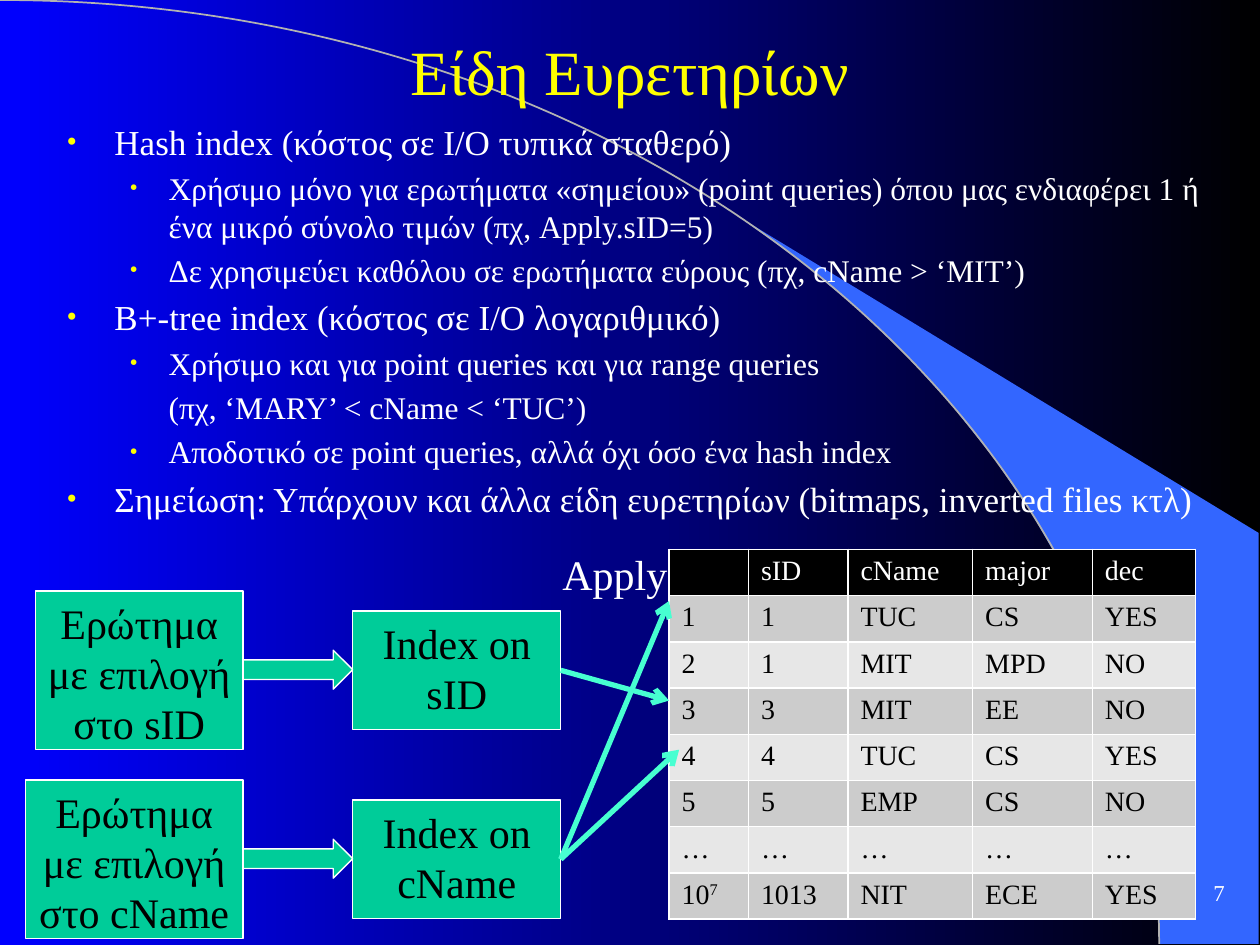
import math
from lxml import etree
from pptx import Presentation
from pptx import util as u
from pptx.dml.color import RGBColor
from pptx.enum import shapes, text
from pptx.oxml import ns

# Content
TITLE = "Είδη Ευρετηρίων"
BODY = [  # level, bullet, text
    (0, True, "Hash index (κόστος σε I/O τυπικά σταθερό)"),
    (1, True, "Χρήσιμο μόνο για ερωτήματα «σημείου» (point queries) όπου μας "
              "ενδιαφέρει 1 ή ένα μικρό σύνολο τιμών (πχ, Apply.sID=5)"),
    (1, True, "Δε χρησιμεύει καθόλου σε ερωτήματα εύρους (πχ, cName > ‘MIT’)"),
    (0, True, "B+-tree index (κόστος σε I/O λογαριθμικό)"),
    (1, True, "Χρήσιμο και για point queries και για range queries"),
    (1, False, "(πχ, ‘MARY’ < cName < ‘TUC’)"),
    (1, True, "Αποδοτικό σε point queries, αλλά όχι όσο ένα hash index"),
    (0, True, "Σημείωση: Υπάρχουν και άλλα είδη ευρετηρίων "
              "(bitmaps, inverted files κτλ)"),
]
LEVELS = [dict(size=20, left=0.38, hang=0.38, mark=85),
          dict(size=18, left=0.81, hang=0.31, mark=75)]
ROWS = [
    ["", "sID", "cName", "major", "dec"],
    ["1", "1", "TUC", "CS", "YES"],
    ["2", "1", "MIT", "MPD", "NO"],
    ["3", "3", "MIT", "EE", "NO"],
    ["4", "4", "TUC", "CS", "YES"],
    ["5", "5", "EMP", "CS", "NO"],
    ["…"] * 5,
    ["10^7", "1013", "NIT", "ECE", "YES"],
]
COLS = [0.63, 0.79, 0.99, 0.95, 0.82]
FLOWS = [  # column name, middle, left of the query box, arrow targets
    ("sID", 5.32, 0.28, [(5.31, 5.56)]),
    ("cName", 6.82, 0.2, [(5.31, 4.77), (5.39, 5.95)]),
]
HEX = dict(blue="0000FF", black="000000", white="FFFFFF", yellow="FFFF00",
           wedge="3366FF", arc="B2B2B2", box="00CC99", link="47FFD1",
           odd="CCCCCC", even="E7E7E7")
FONT = "Times New Roman"
WIDE, HIGH = 10, 7.5
RX, RY = 0.92 * WIDE, 7.49  # radii of the background arc

deck = Presentation()
deck.slide_width, deck.slide_height = u.Inches(WIDE), u.Inches(HIGH)
slide = deck.slides.add_slide(deck.slide_layouts[6])
items = slide.shapes


def rgb(name):
    return RGBColor.from_string(HEX[name])


def inches(*nums):
    return [u.Inches(n) for n in nums]


def add(node, tag, **attrs):
    kid = etree.SubElement(node, ns.qn(tag))
    for key, val in attrs.items():
        kid.set(key, str(val))
    return kid


def write(par, words, size=24, color="white", align="CENTER"):
    """Fill a paragraph; a caret starts a superscript."""
    par.alignment = getattr(text.PP_ALIGN, align)
    if not words:
        add(par._p, "a:endParaRPr", sz=size * 100)
        return
    for n, part in enumerate(words.split("^")):
        run = par.add_run()
        run.text = part
        run.font.size, run.font.name = u.Pt(size), FONT
        run.font.color.rgb = rgb(color)
        if n:
            run.font._element.set("baseline", "30000")


def setup(shape, pad=0.09, anchor="TOP"):
    frame = shape.text_frame
    frame.word_wrap = True
    frame.vertical_anchor = getattr(text.MSO_ANCHOR, anchor)
    frame.margin_left = frame.margin_right = u.Inches(pad)
    frame.margin_top = frame.margin_bottom = u.Inches(0.05)
    return frame


def label(words, at, anchor="TOP", **style):
    frame = setup(items.add_textbox(*inches(*at)), anchor=anchor)
    write(frame.paragraphs[0], words, **style)


def paint(shape, fill=None, line=None, width=0.75):
    shape.shadow.inherit = False
    if fill:
        shape.fill.solid()
        shape.fill.fore_color.rgb = rgb(fill)
    else:
        shape.fill.background()
    if line:
        shape.line.color.rgb = rgb(line)
        shape.line.width = u.Pt(width)
    else:
        shape.line.fill.background()


def block(kind, at, lines=()):
    shape = items.add_shape(getattr(shapes.MSO_SHAPE, kind), *inches(*at))
    paint(shape, "box", "white")
    frame = setup(shape)
    for n, words in enumerate(lines):
        par = frame.add_paragraph() if n else frame.paragraphs[0]
        write(par, words, color="black")
    return shape


def outline(points, close):
    spots = [tuple(inches(*p)) for p in points]
    form = items.build_freeform(*spots[0])
    form.add_line_segments(spots[1:], close=close)
    return form.convert_to_shape()


# Background: gradient, wedge and arc
back = slide.background.fill
back.gradient()
back.gradient_angle = 0
for stop, name in zip(back.gradient_stops, ("blue", "black")):
    stop.color.rgb = rgb(name)
first, steps = math.acos(5.89 / RX), 13
turns = [first * (1 - n / steps) for n in range(steps + 1)]
edge = [(RX * math.cos(t), RY * (1 - math.sin(t))) for t in turns]
paint(outline(edge + [(9.99, RY), (9.99, 4.23)], True), "wedge")

arc = outline([(0, 0), (RX, RY)], False)
seg = arc._element.find(".//" + ns.qn("a:lnTo"))
seg.tag = ns.qn("a:cubicBezTo")
for spot in ((RX, 3.35), (5.08, 0)):
    x, y = inches(*spot)
    seg.insert(0, add(seg, "a:pt", x=x, y=y))
paint(arc, line="arc", width=1)

# Page number and title
label("7", (9.25, 6.83, 0.56, 0.5), "MIDDLE", size=13, align="RIGHT")
label(TITLE, (0.75, 0.12, 8.5, 0.87), "MIDDLE", size=36, color="yellow")

# Bulleted text
frame = setup(items.add_textbox(*inches(0.43, 0.91, 9.21, 4.5)), pad=0.1)
for n, (level, bullet, words) in enumerate(BODY):
    par = frame.add_paragraph() if n else frame.paragraphs[0]
    look = LEVELS[level]
    write(par, words, size=look["size"], align="LEFT")
    par.level = level
    props = par._p.get_or_add_pPr()
    props.set("marL", str(u.Inches(look["left"])))
    props.set("indent", str(-u.Inches(look["hang"]) if bullet else 0))
    add(add(props, "a:spcBef"), "a:spcPct", val=20000)
    if bullet:
        add(add(props, "a:buClr"), "a:srgbClr", val=HEX["yellow"])
        add(props, "a:buSzPct", val=look["mark"] * 1000)
        add(props, "a:buFont", typeface=FONT)
        add(props, "a:buChar", char="•")
    else:
        add(props, "a:buNone")

# Table
label("Apply", (4.13, 4.3, 1.5, 0.51))
table = items.add_table(len(ROWS), len(COLS),
                        *inches(5.31, 4.36, sum(COLS), 2.93)).table
for col, width in zip(table.columns, COLS):
    col.width = u.Inches(width)
for r, row in enumerate(ROWS):
    for c, words in enumerate(row):
        cell = table.cell(r, c)
        write(cell.text_frame.paragraphs[0], words, size=16, align="LEFT",
              color="black" if r else "white")
        props = cell._tc.get_or_add_tcPr()
        for side in "LRTB":
            line = add(props, "a:ln" + side, w=u.Pt(1))
            add(add(line, "a:solidFill"), "a:srgbClr", val=HEX["white"])
        cell.fill.solid()
        shade = ("odd" if r % 2 else "even") if r else "black"
        cell.fill.fore_color.rgb = rgb(shade)

# Query, index and links into the table
for name, mid, left, ends in FLOWS:
    index = block("RECTANGLE", (2.8, mid - 0.47, 1.65, 0.94),
                  ["Index on", name])
    block("RECTANGLE", (left, mid - 0.63, 1.93 - left, 1.26),
          ["Ερώτημα με επιλογή στο " + name])
    block("RIGHT_ARROW", (1.93, mid - 0.16, 0.87, 0.31))
    for end in ends:
        link = items.add_connector(shapes.MSO_CONNECTOR.STRAIGHT,
                                   *inches(4.45, mid, *end))
        link.begin_connect(index, 3)
        link.line.color.rgb = rgb("link")
        link.line.width = u.Pt(3)
        add(link.line._get_or_add_ln(), "a:tailEnd", type="arrow")
        add(link._element.spPr, "a:effectLst")

deck.save("out.pptx")
